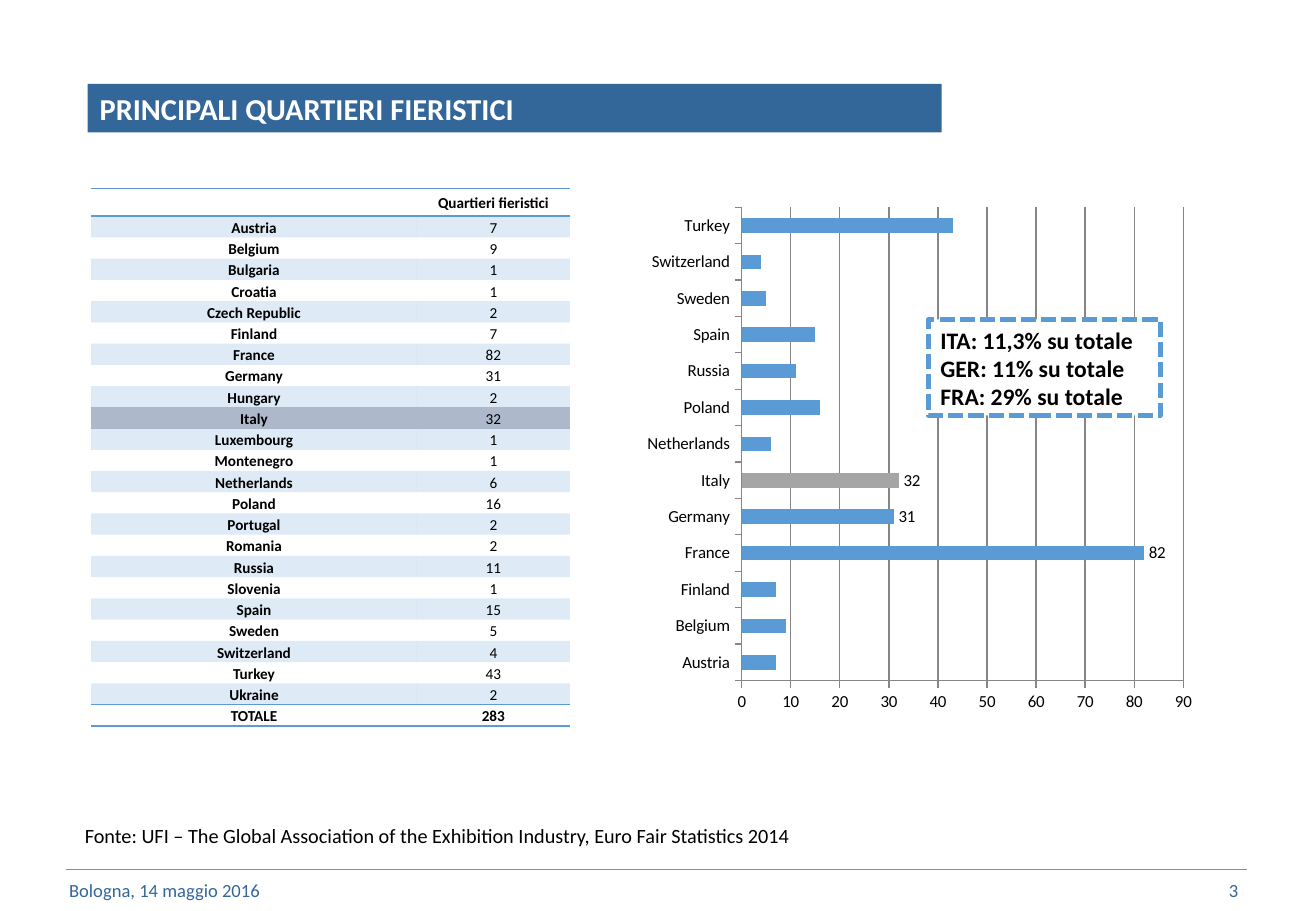
import pptx
import pptx.chart.data
import pptx.dml.color
import pptx.enum.chart
import pptx.enum.dml
import pptx.enum.shapes
import pptx.enum.text
import pptx.oxml
import pptx.oxml.ns
import pptx.util
from lxml import etree

Inches, Pt = pptx.util.Inches, pptx.util.Pt
ALIGN, ANCHOR = pptx.enum.text.PP_ALIGN, pptx.enum.text.MSO_ANCHOR
qn = pptx.oxml.ns.qn
FONT = "Calibri"
NAVY, BLUE, GRAY, SLATE = "336699", "5B9BD5", "A5A5A5", "ADB9CA"
BLACK, WHITE, GRID = "000000", "FFFFFF", "868686"

HALLS = {
    "Austria": 7, "Belgium": 9, "Bulgaria": 1, "Croatia": 1, "Czech Republic": 2,
    "Finland": 7, "France": 82, "Germany": 31, "Hungary": 2, "Italy": 32,
    "Luxembourg": 1, "Montenegro": 1, "Netherlands": 6, "Poland": 16,
    "Portugal": 2, "Romania": 2, "Russia": 11, "Slovenia": 1, "Spain": 15,
    "Sweden": 5, "Switzerland": 4, "Turkey": 43, "Ukraine": 2,
}
CHARTED = [c for c, n in HALLS.items() if n > 2]
LABELLED = ("France", "Germany", "Italy")


def rgb(color):
    return pptx.dml.color.RGBColor.from_string(color)


def set_font(font, size, color=BLACK, bold=False):
    for name, value in {"name": FONT, "size": Pt(size), "bold": bold}.items():
        setattr(font, name, value)
    font.color.rgb = rgb(color)


def write(tf, lines, size, color=BLACK, bold=False, align=ALIGN.LEFT, anchor=ANCHOR.TOP):
    tf.word_wrap = True
    tf.vertical_anchor = anchor
    for i, line in enumerate(lines):
        p = tf.paragraphs[0] if i == 0 else tf.add_paragraph()
        p.alignment = align
        r = p.add_run()
        r.text = line
        set_font(r.font, size, color, bold)


def add_text(s, box, text, size, **style):
    sp = s.shapes.add_textbox(*map(Inches, box))
    write(sp.text_frame, [text], size, **style)


def add_title(s, box, text):
    sp = s.shapes.title
    sp.left, sp.top, sp.width, sp.height = map(Inches, box)
    sp.fill.solid()
    sp.fill.fore_color.rgb = rgb(NAVY)
    write(sp.text_frame, [text], 18, WHITE, True, anchor=ANCHOR.MIDDLE)


def fill_cell(cell, color, alpha=None):
    cell.fill.solid()
    cell.fill.fore_color.rgb = rgb(color)
    if alpha:
        clr = cell._tc.tcPr.find(".//" + qn("a:srgbClr"))
        etree.SubElement(clr, qn("a:alpha"), val=str(alpha * 1000))


def rule_cell(cell):
    """Top and bottom borders, which precede the fill in the cell properties."""
    for i, side in enumerate(("a:lnT", "a:lnB")):
        ln = etree.Element(qn(side), w=str(Pt(1)))
        fill = etree.SubElement(ln, qn("a:solidFill"))
        etree.SubElement(fill, qn("a:srgbClr"), val=BLUE)
        cell._tc.get_or_add_tcPr().insert(i, ln)


def add_halls_table(s, box):
    x, y, w, h = box
    rows = [("", "Quartieri fieristici"), *HALLS.items(), ("TOTALE", sum(HALLS.values()))]
    last = len(rows) - 1
    table = s.shapes.add_table(len(rows), 2, *map(Inches, box)).table
    table.first_row = table.horz_banding = False
    table._tbl.tblPr.find(qn("a:tableStyleId")).text = "{2D5ABB26-0587-4C30-8999-92F81FD0307C}"
    head_w, head_h = 2.68, 0.23
    for column, width in zip(table.columns, (head_w, w - head_w)):
        column.width = Inches(width)
    for i, row in enumerate(rows):
        table.rows[i].height = Inches(head_h if i == 0 else (h - head_h) / last)
        for j, value in enumerate(row):
            cell = table.cell(i, j)
            cell.margin_left = cell.margin_right = Inches(0.07)
            cell.margin_top = cell.margin_bottom = 0
            cell.vertical_anchor = ANCHOR.MIDDLE
            p = cell.text_frame.paragraphs[0]
            p.alignment, p.line_spacing = ALIGN.CENTER, 1.15
            if value == "":
                etree.SubElement(p._p, qn("a:endParaRPr"), sz="900")
            else:
                r = p.add_run()
                r.text = str(value)
                set_font(r.font, 9, bold=j == 0 or i in (0, last))
            # Banding, the highlighted country and the ruled rows
            if row[0] == "Italy":
                fill_cell(cell, SLATE)
            elif i % 2 and i < last:
                fill_cell(cell, BLUE, alpha=20)
            else:
                cell.fill.background()
            if i in (0, last):
                rule_cell(cell)


def add_halls_chart(s, box):
    data = pptx.chart.data.CategoryChartData()
    data.categories = CHARTED
    data.add_series("Series 1", [HALLS[c] for c in CHARTED])
    kind = pptx.enum.chart.XL_CHART_TYPE.BAR_CLUSTERED
    chart = s.shapes.add_chart(kind, *map(Inches, box), data).chart
    chart.has_legend = chart.has_title = False
    set_font(chart.font, 10)

    # Axes
    for axis in (chart.category_axis, chart.value_axis):
        axis.major_tick_mark = pptx.enum.chart.XL_TICK_MARK.OUTSIDE
        axis.format.line.color.rgb = rgb(GRID)
    chart.category_axis.has_major_gridlines = False
    axis = chart.value_axis
    for name, value in {"minimum_scale": 0, "maximum_scale": 90, "major_unit": 10,
                        "has_major_gridlines": True}.items():
        setattr(axis, name, value)
    axis.major_gridlines.format.line.color.rgb = rgb(GRID)

    # Bars and labels
    plot = chart.plots[0]
    plot.gap_width, plot.vary_by_categories = 150, False
    series = plot.series[0]
    series.format.fill.solid()
    series.format.fill.fore_color.rgb = rgb(BLUE)
    series.data_labels.show_value = False
    for country in LABELLED:
        label = series.points[CHARTED.index(country)].data_label
        set_font(label.font, 10)
        label.position = pptx.enum.chart.XL_LABEL_POSITION.OUTSIDE_END
    fill = series.points[CHARTED.index("Italy")].format.fill
    fill.solid()
    fill.fore_color.rgb = rgb(GRAY)

    # Plot area position
    area = chart._chartSpace.chart.plotArea
    for old in area.findall(qn("c:layout")):
        area.remove(old)
    layout = etree.Element(qn("c:layout"))
    manual = etree.SubElement(layout, qn("c:manualLayout"))
    for tag, value in {"layoutTarget": "inner", "xMode": "edge", "yMode": "edge",
                       "x": 0.2, "y": 0.02, "w": 0.77, "h": 0.9}.items():
        etree.SubElement(manual, qn("c:" + tag), val=str(value))
    area.insert(0, layout)


def add_callout(s, box, lines):
    sp = s.shapes.add_shape(pptx.enum.shapes.MSO_SHAPE.RECTANGLE, *map(Inches, box))
    sp.shadow.inherit = False
    sp.fill.solid()
    sp.fill.fore_color.rgb = rgb(WHITE)
    sp.line.color.rgb = rgb(BLUE)
    sp.line.width = Pt(3)
    sp.line.dash_style = pptx.enum.dml.MSO_LINE.SQUARE_DOT
    write(sp.text_frame, lines, 14, bold=True)


def add_footer(s, box, date, number):
    x, y, w, h = box
    line = s.shapes.add_connector(pptx.enum.shapes.MSO_CONNECTOR.STRAIGHT,
                                  *map(Inches, (x, y, x + w, y)))
    line.line.color.rgb = rgb(BLUE)
    line.line.width = Pt(0.25)
    etree.SubElement(line._element.spPr, qn("a:effectLst"))
    style = {"color": NAVY, "anchor": ANCHOR.MIDDLE}
    add_text(s, (x - 0.07, y, 2.71, h), date, 11, **style)
    add_text(s, (x + w - 2.5, y, 2.53, h), number, 11, align=ALIGN.RIGHT, **style)


def main():
    prs = pptx.Presentation()
    prs.slide_width, prs.slide_height = Inches(10.83), Inches(7.5)
    s = prs.slides.add_slide(prs.slide_layouts[5])
    add_title(s, (0.72, 0.69, 7.03, 0.4), "PRINCIPALI QUARTIERI FIERISTICI")
    add_halls_table(s, (0.75, 1.55, 3.94, 4.37))
    add_halls_chart(s, (5.16, 1.62, 4.72, 4.33))
    add_callout(s, (7.64, 2.63, 1.91, 0.79),
                ["ITA: 11,3% su totale", "GER: 11% su totale", "FRA: 29% su totale"])
    add_text(s, (0.6, 6.73, 9.06, 0.3), "Fonte: UFI – The Global Association of the "
             "Exhibition Industry, Euro Fair Statistics 2014", 12)
    add_footer(s, (0.54, 7.16, 9.72, 0.34), "Bologna, 14 maggio 2016", "3")
    prs.save("out.pptx")


if __name__ == "__main__":
    main()
